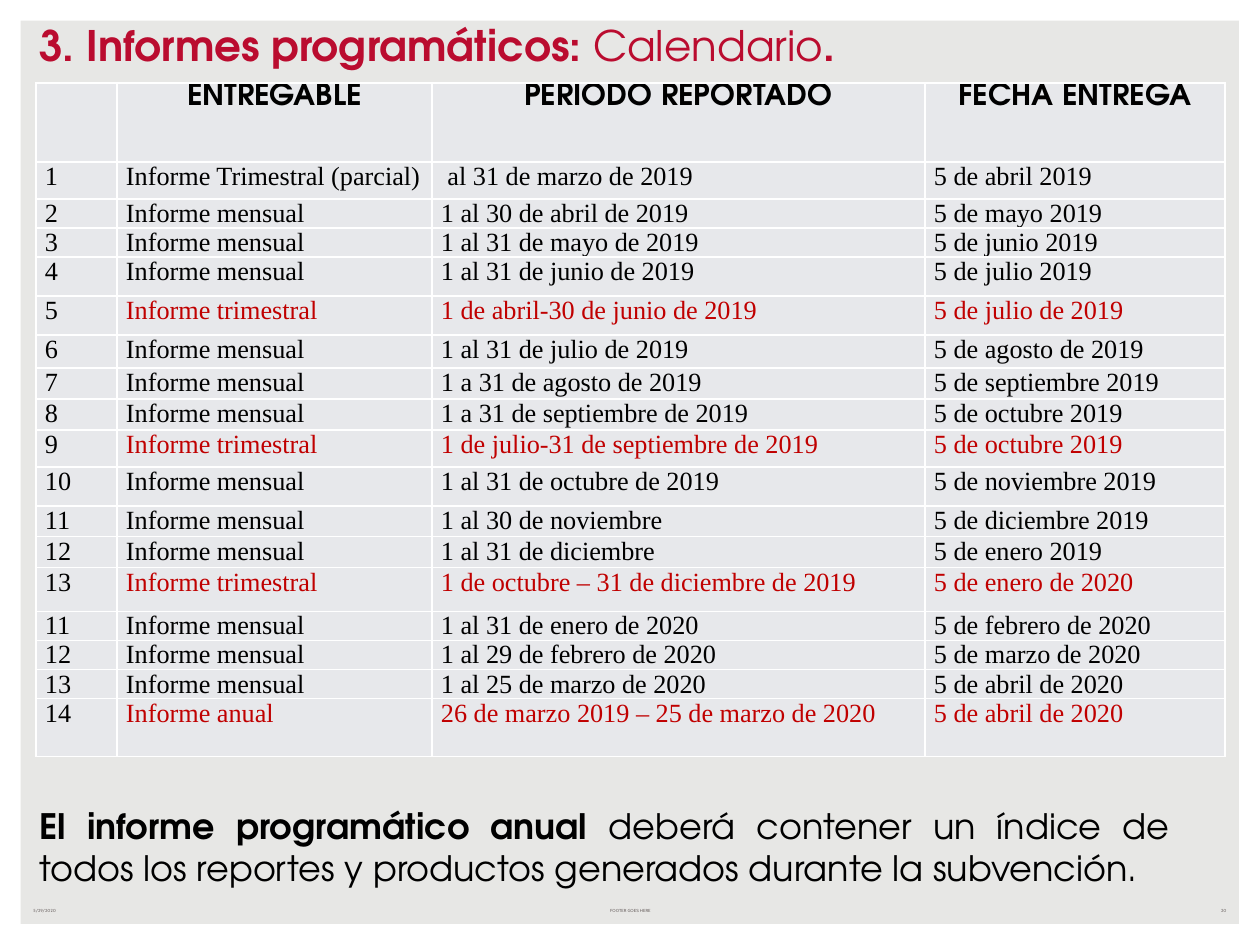
import pptx
import pptx.dml.color
import pptx.enum.shapes
import pptx.enum.text
import pptx.oxml
import pptx.oxml.ns
import pptx.util

PX = 914400 / 126
ALIGN = pptx.enum.text.PP_ALIGN
ANCHOR = pptx.enum.text.MSO_ANCHOR
HEADING_FONT = "TeX Gyre Adventor"
BLACK, RED, CRIMSON, WHITE, GRAY = "000000", "C00000", "BA0C2F", "FFFFFF", "6C6463"


def colour(code):
    return pptx.dml.color.RGBColor.from_string(code)


def write(para, text, size=15, font="Times New Roman", color=BLACK, bold=False):
    """Append a formatted span of text to a paragraph."""
    span = para.add_run()
    span.text = text
    span.font.size = pptx.util.Pt(size)
    span.font.name = font
    span.font.bold = bold
    span.font.color.rgb = colour(color)


deck = pptx.Presentation()
deck.slide_width, deck.slide_height = round(1260 * PX), round(945 * PX)
page = deck.slides.add_slide(deck.slide_layouts[6])
page.background.fill.solid()
page.background.fill.fore_color.rgb = colour("E7E7E5")

frame = page.shapes.add_shape(
    pptx.enum.shapes.MSO_SHAPE.FRAME, 0, 0, deck.slide_width, deck.slide_height)
frame.adjustments[0] = 0.022
frame.shadow.inherit = False
frame.fill.solid()
frame.fill.fore_color.rgb = colour(WHITE)
frame.line.fill.background()

# Calendar: row height in px, then the cells
header = ("", "ENTREGABLE", "PERIODO REPORTADO", "FECHA ENTREGA")
monthly, quarterly = "Informe mensual", "Informe trimestral"
calendar = [
    (79, *header),
    (37, "1", "Informe Trimestral (parcial)", " al 31 de marzo de 2019", "5 de abril 2019"),
    (29, "2", monthly, "1 al 30 de abril de 2019", "5 de mayo 2019"),
    (29, "3", monthly, "1 al 31 de mayo de 2019", "5 de junio 2019"),
    (39, "4", monthly, "1 al 31 de junio de 2019", "5 de julio 2019"),
    (39, "5", quarterly, "1 de abril-30 de junio de 2019", "5 de julio de 2019"),
    (33, "6", monthly, "1 al 31 de julio de 2019", "5 de agosto de 2019"),
    (31, "7", monthly, "1 a 31 de agosto de 2019", "5 de septiembre 2019"),
    (31, "8", monthly, "1 a 31 de septiembre de 2019", "5 de octubre 2019"),
    (37, "9", quarterly, "1 de julio-31 de septiembre de 2019", "5 de octubre 2019"),
    (39, "10", monthly, "1 al 31 de octubre de 2019", "5 de noviembre 2019"),
    (31, "11", monthly, "1 al 30 de noviembre", "5 de diciembre 2019"),
    (31, "12", monthly, "1 al 31 de diciembre", "5 de enero 2019"),
    (44, "13", quarterly, "1 de octubre – 31 de diciembre de 2019", "5 de enero de 2020"),
    (29, "11", monthly, "1 al 31 de enero de 2020", "5 de febrero de 2020"),
    (29, "12", monthly, "1 al 29 de febrero de 2020", "5 de marzo de 2020"),
    (29, "13", monthly, "1 al 25 de marzo de 2020", "5 de abril de 2020"),
    (58, "14", "Informe anual", "26 de marzo 2019 – 25 de marzo de 2020", "5 de abril de 2020"),
]
column_widths = (81, 315, 493, 300)
table_height = sum(height for height, *texts in calendar)
table = page.shapes.add_table(
    len(calendar), len(column_widths), round(36 * PX), round(83 * PX),
    round(sum(column_widths) * PX), round(table_height * PX)).table
table.first_row = table.horz_banding = False
for column, width in zip(table.columns, column_widths):
    column.width = round(width * PX)

for row_index, (height, *texts) in enumerate(calendar):
    table.rows[row_index].height = round(height * PX)
    highlighted = texts[1] in (quarterly, "Informe anual")
    for column_index, text in enumerate(texts):
        cell = table.cell(row_index, column_index)
        cell.margin_left = cell.margin_right = round(9 * PX)
        cell.margin_top = cell.margin_bottom = 0
        properties = cell._tc.get_or_add_tcPr()
        for side in ("lnL", "lnR", "lnT", "lnB"):
            properties.append(pptx.oxml.parse_xml(
                f'<a:{side} {pptx.oxml.ns.nsdecls("a")} w="12700"><a:solidFill>'
                f'<a:srgbClr val="{WHITE}"/></a:solidFill></a:{side}>'))
        cell.fill.solid()
        cell.fill.fore_color.rgb = colour("E7E8EB")
        para = cell.text_frame.paragraphs[0]
        if row_index == 0:
            para.alignment = ALIGN.CENTER
            if text:
                write(para, text, size=17, font=HEADING_FONT, bold=True)
        else:
            write(para, text, color=RED if highlighted and column_index else BLACK)

# Text boxes: place in px, anchor, alignment, spans
title_format = {"size": 24, "font": HEADING_FONT, "color": CRIMSON}
note_format = {"size": 20, "font": HEADING_FONT}
footer_format = {"size": 2.5, "font": "Cabin", "color": GRAY}
text_boxes = [
    ((21, 902, 294, 18), ANCHOR.MIDDLE, ALIGN.LEFT, [("5/29/2020", footer_format)]),
    ((431, 902, 399, 18), ANCHOR.MIDDLE, ALIGN.CENTER,
     [("FOOTER GOES HERE", footer_format)]),
    ((945, 902, 294, 18), ANCHOR.MIDDLE, ALIGN.RIGHT, [("20", footer_format)]),
    ((27, 13, 1036, 63), ANCHOR.BOTTOM, ALIGN.LEFT,
     [("3. Informes programáticos: ", {**title_format, "bold": True}),
      ("Calendario", title_format),
      (".", {**title_format, "bold": True})]),
    ((27, 798, 1155, 147), ANCHOR.TOP, ALIGN.JUSTIFY,
     [("El informe programático anual ", {**note_format, "bold": True}),
      ("deberá contener un índice de todos los reportes y productos "
       "generados durante la subvención.", note_format)]),
]
for place, anchor, alignment, spans in text_boxes:
    box = page.shapes.add_textbox(*(round(length * PX) for length in place))
    box.text_frame.word_wrap = True
    box.text_frame.vertical_anchor = anchor
    para = box.text_frame.paragraphs[0]
    para.alignment = alignment
    for text, text_format in spans:
        write(para, text, **text_format)

deck.save("out.pptx")
